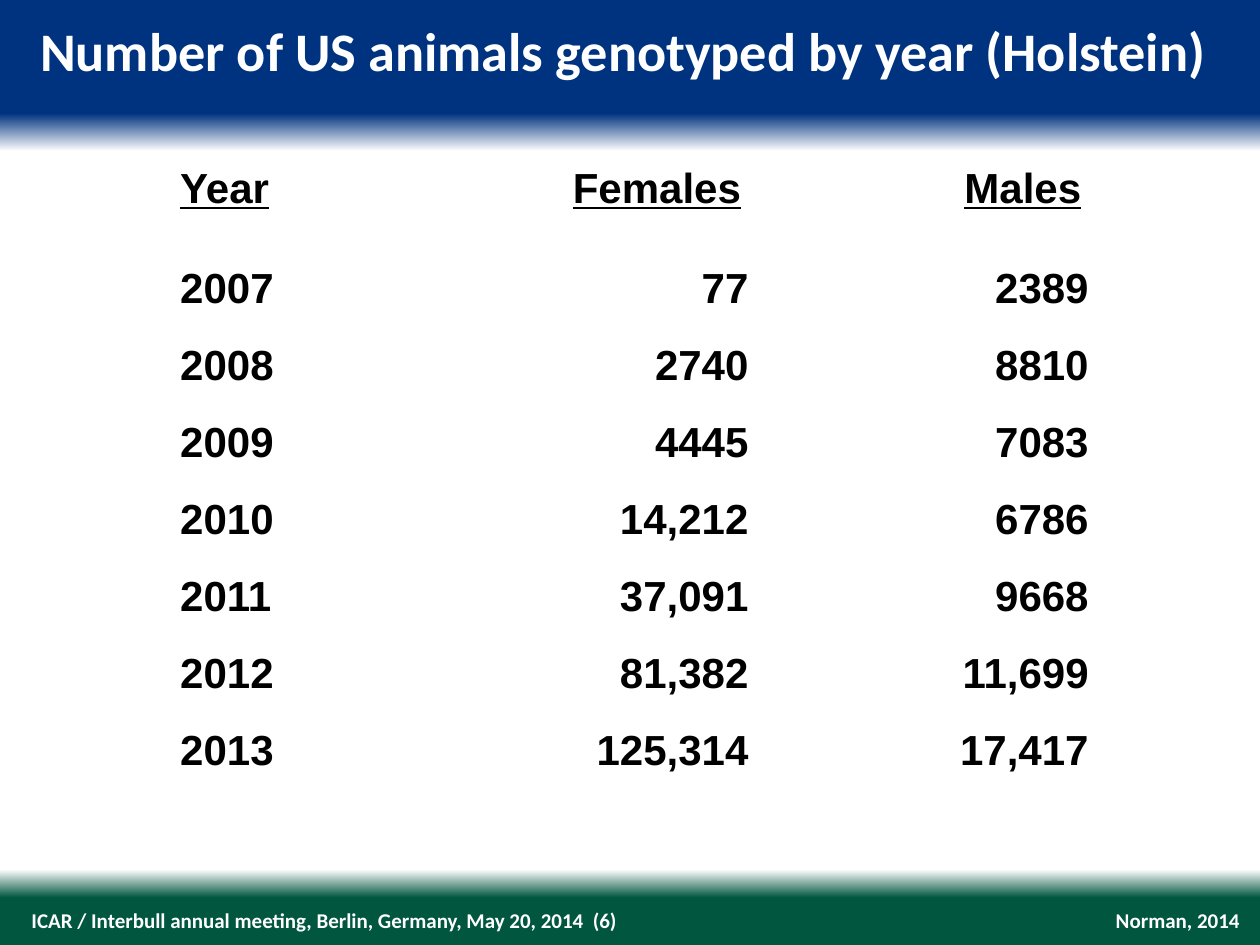
import dataclasses

import pptx
import pptx.dml.color
import pptx.enum.text
import pptx.oxml
import pptx.oxml.ns
import pptx.util

Pt = pptx.util.Pt
ALIGN = pptx.enum.text.PP_ALIGN
ANCHOR = pptx.enum.text.MSO_ANCHOR


@dataclasses.dataclass(frozen=True)
class Theme:
    heading_font: str = "Calibri"
    table_font: str = "Arial"
    title_size: float = 31
    table_size: float = 24
    footer_size: float = 12
    light: str = "FFFFFF"
    dark: str = "000000"
    header_band: str = "00337F"
    footer_band: str = "00563F"


class SlideBuilder:
    def __init__(self, slide, theme):
        self.slide = slide
        self.theme = theme

    def background(self, stops):
        fill = self.slide.background.fill
        fill.gradient()
        fill.gradient_angle = 270
        stop_list = self.slide.element.xpath(".//p:bg//a:gsLst")[0]
        for stop in list(stop_list):
            stop_list.remove(stop)
        namespace = pptx.oxml.ns.nsdecls("a")
        for percent, color in stops:
            stop_list.append(pptx.oxml.parse_xml(
                f'<a:gs {namespace} pos="{percent * 1000}">'
                f'<a:srgbClr val="{color}"/></a:gs>'))

    def run(self, paragraph, text, font, size, color, underline=False):
        run = paragraph.add_run()
        run.text = text
        run.font.name = font
        run.font.size = Pt(size)
        run.font.bold = True
        run.font.underline = underline
        run.font.color.rgb = pptx.dml.color.RGBColor.from_string(color)

    def frame(self, shape, text, size, align, anchor, wrap=True):
        frame = shape.text_frame
        frame.margin_left = frame.margin_right = 0
        frame.margin_top = frame.margin_bottom = 0
        frame.word_wrap = wrap
        frame.auto_size = pptx.enum.text.MSO_AUTO_SIZE.SHAPE_TO_FIT_TEXT
        frame.vertical_anchor = anchor
        paragraph = frame.paragraphs[0]
        paragraph.alignment = align
        self.run(paragraph, text, self.theme.heading_font, size, self.theme.light)

    def title(self, text, left, top, width, height):
        title = self.slide.shapes.title
        title.left, title.top = Pt(left), Pt(top)
        title.width, title.height = Pt(width), Pt(height)
        self.frame(title, text, self.theme.title_size, ALIGN.LEFT, ANCHOR.TOP)

    def footer(self, text, left, top, width, height, align, wrap=True):
        footer = self.slide.shapes.add_textbox(
            Pt(left), Pt(top), Pt(width), Pt(height))
        self.frame(footer, text, self.theme.footer_size, align, ANCHOR.MIDDLE, wrap)

    def table(self, records, left, top, widths, row_height):
        table = self.slide.shapes.add_table(
            len(records), len(widths), Pt(left), Pt(top),
            Pt(sum(widths)), Pt(row_height * len(records))).table
        table.first_row = False
        table.horz_banding = False
        for column, width in zip(table.columns, widths):
            column.width = Pt(width)
        for row_index, record in enumerate(records):
            table.rows[row_index].height = Pt(row_height)
            for column_index, text in enumerate(record):
                self.cell(table.cell(row_index, column_index), text,
                          row_index == 0, column_index == 0)

    def cell(self, cell, text, is_heading, is_year):
        is_count = not (is_heading or is_year)
        cell.fill.background()
        cell.vertical_anchor = ANCHOR.TOP if is_heading else ANCHOR.BOTTOM
        cell.margin_left = cell.margin_right = Pt(0.72 if is_count else 5)
        cell.margin_top = Pt(0.72 if is_count else 0)
        cell.margin_bottom = 0
        paragraph = cell.text_frame.paragraphs[0]
        paragraph.alignment = ALIGN.LEFT if is_year else ALIGN.RIGHT
        paragraph.line_spacing = 1.0 if is_count else 1.15
        self.run(paragraph, text, self.theme.table_font, self.theme.table_size,
                 self.theme.dark, is_heading)


def main():
    genotyped = [
        ("Year", "Females", "Males"),
        ("2007", "77", "2389"),
        ("2008", "2740", "8810"),
        ("2009", "4445", "7083"),
        ("2010", "14,212", "6786"),
        ("2011", "37,091", "9668"),
        ("2012", "81,382", "11,699"),
        ("2013", "125,314", "17,417"),
    ]
    theme = Theme()
    presentation = pptx.Presentation()
    presentation.slide_width, presentation.slide_height = Pt(720), Pt(540)
    slide = presentation.slides.add_slide(presentation.slide_layouts[5])
    builder = SlideBuilder(slide, theme)
    builder.background([
        (0, theme.header_band), (12, theme.header_band),
        (16, theme.light), (92, theme.light),
        (95, theme.footer_band), (100, theme.footer_band),
    ])
    builder.footer("Norman, 2014", 636.5, 518.4, 72, 14.4, ALIGN.RIGHT, wrap=False)
    builder.footer(
        "ICAR / Interbull annual meeting, Berlin, Germany, May 20, 2014  (6)",
        18, 518.4, 376, 14.4, ALIGN.LEFT)
    builder.title("Number of US animals genotyped by year (Holstein)",
                  23, 10, 680, 37.5)
    builder.table(genotyped, 98, 90.7, (136, 194.4, 194.4), 44)
    presentation.save("out.pptx")


if __name__ == "__main__":
    main()
